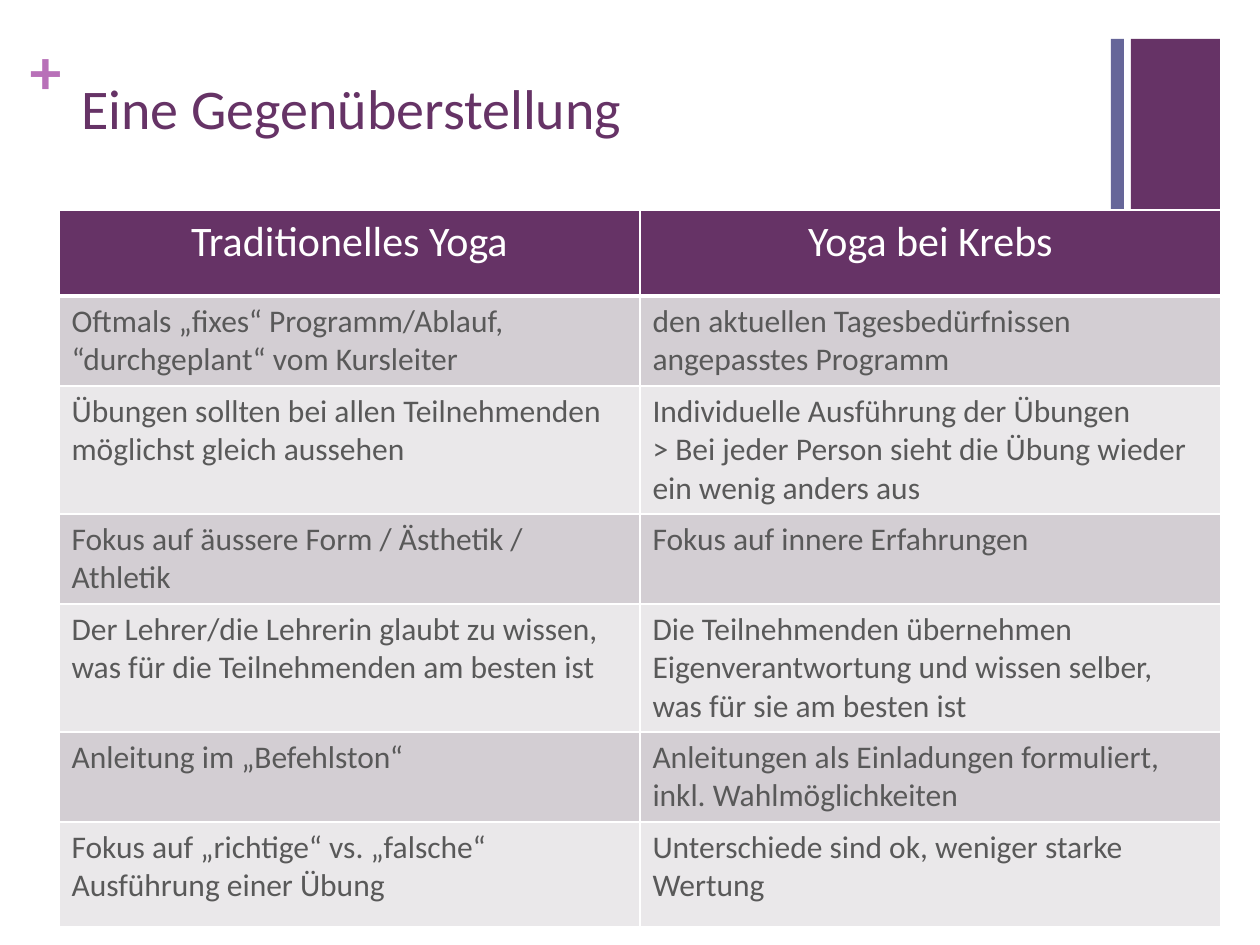
import pptx
import pptx.dml.color
import pptx.enum.shapes
import pptx.enum.text
import pptx.oxml
import pptx.oxml.ns
import pptx.util

RGBColor = pptx.dml.color.RGBColor
PLUM = RGBColor(0x66, 0x33, 0x66)
SLATE = RGBColor(0x66, 0x66, 0x99)
ORCHID = RGBColor(0xB8, 0x70, 0xB8)
WHITE = RGBColor(0xFF, 0xFF, 0xFF)
GREY = RGBColor(0x59, 0x59, 0x59)
BAND_DARK = RGBColor(0xD3, 0xCE, 0xD3)
BAND_LIGHT = RGBColor(0xEA, 0xE8, 0xEA)

PX = 914400 // 126
FONT = "Calibri"
ROW_HEIGHTS = [86, 90, 128, 90, 128, 90, 105]
COMPARISON = [
    ("Traditionelles Yoga", "Yoga bei Krebs"),
    ("Oftmals „fixes“ Programm/Ablauf, “durchgeplant“ vom Kursleiter",
     "den aktuellen Tagesbedürfnissen angepasstes Programm"),
    ("Übungen sollten bei allen Teilnehmenden möglichst gleich aussehen",
     "Individuelle Ausführung der Übungen\n"
     "> Bei jeder Person sieht die Übung wieder ein wenig anders aus"),
    ("Fokus auf äussere Form / Ästhetik / Athletik",
     "Fokus auf innere Erfahrungen"),
    ("Der Lehrer/die Lehrerin glaubt zu wissen, was für die Teilnehmenden am besten ist",
     "Die Teilnehmenden übernehmen Eigenverantwortung und wissen selber, "
     "was für sie am besten ist"),
    ("Anleitung im „Befehlston“",
     "Anleitungen als Einladungen formuliert, inkl. Wahlmöglichkeiten"),
    ("Fokus auf „richtige“ vs. „falsche“ Ausführung einer Übung",
     "Unterschiede sind ok, weniger starke Wertung"),
]


def px(*lengths):
    """Turn px lengths into EMU."""
    return [pptx.util.Emu(length * PX) for length in lengths]


def write_text(frame, text, *, size, color, bold=False, centred=False):
    """Fill a text frame with one paragraph per line of text."""
    frame.word_wrap = True
    for index, line in enumerate(text.split("\n")):
        paragraph = frame.add_paragraph() if index else frame.paragraphs[0]
        if centred:
            paragraph.alignment = pptx.enum.text.PP_ALIGN.CENTER
        run = paragraph.add_run()
        run.text = line
        run.font.name = FONT
        run.font.size = pptx.util.Pt(size)
        run.font.bold = bold
        run.font.color.rgb = color


def add_bar(slide, left, top, width, height, color):
    """Draw a plain coloured bar."""
    bar = slide.shapes.add_shape(
        pptx.enum.shapes.MSO_SHAPE.RECTANGLE, *px(left, top, width, height))
    bar.shadow.inherit = False
    bar.fill.solid()
    bar.fill.fore_color.rgb = color
    bar.line.fill.background()


def add_header(slide, left, top, width, height):
    """Place the plus sign, the title and the bars at the right edge."""
    plus = slide.shapes.add_textbox(*px(left, top, 37, 77)).text_frame
    plus.margin_left = plus.margin_right = plus.margin_top = plus.margin_bottom = 0
    write_text(plus, "+", size=36, color=ORCHID, bold=True)
    title = slide.shapes.add_textbox(*px(left + 39, top + 35, 1041, 154))
    write_text(title.text_frame, "Eine Gegenüberstellung", size=32, color=PLUM)
    right, bar_top = left + width, top + 7
    add_bar(slide, right - 89, bar_top, 89, height - 7, PLUM)
    add_bar(slide, right - 109, bar_top, 13, height - 7, SLATE)


def set_borders(cell, bottom_width):
    """Give a cell white borders."""
    properties = cell._tc.get_or_add_tcPr()
    widths = {"lnL": 1, "lnR": 1, "lnT": 1, "lnB": bottom_width}
    for index, (side, points) in enumerate(widths.items()):
        properties.insert(index, pptx.oxml.parse_xml(
            f'<a:{side} {pptx.oxml.ns.nsdecls("a")} w="{pptx.util.Pt(points)}">'
            f'<a:solidFill><a:srgbClr val="{WHITE}"/></a:solidFill></a:{side}>'))


def add_comparison(slide, left, top, width):
    """Place the two-column comparison table."""
    table = slide.shapes.add_table(
        len(COMPARISON), 2, *px(left, top, width, sum(ROW_HEIGHTS))).table
    for row, (entries, height) in enumerate(zip(COMPARISON, ROW_HEIGHTS)):
        heading = row == 0
        table.rows[row].height = px(height)[0]
        band = PLUM if heading else BAND_DARK if row % 2 else BAND_LIGHT
        for column, entry in enumerate(entries):
            cell = table.cell(row, column)
            cell.fill.solid()
            cell.fill.fore_color.rgb = band
            set_borders(cell, 3 if heading else 1)
            if row == 1:
                cell._tc.tcPr.find(pptx.oxml.ns.qn("a:lnT")).set(
                    "w", str(pptx.util.Pt(3)))
            write_text(cell.text_frame, entry, size=24 if heading else 18,
                       color=WHITE if heading else GREY, centred=heading)


def main():
    """Build and save the slide."""
    deck = pptx.Presentation()
    deck.slide_width, deck.slide_height = px(1260, 945)
    slide = deck.slides.add_slide(deck.slide_layouts[6])
    add_header(slide, 30, 32, 1190, 228)
    add_comparison(slide, 59, 210, 1162)
    deck.save("out.pptx")


if __name__ == "__main__":
    main()
